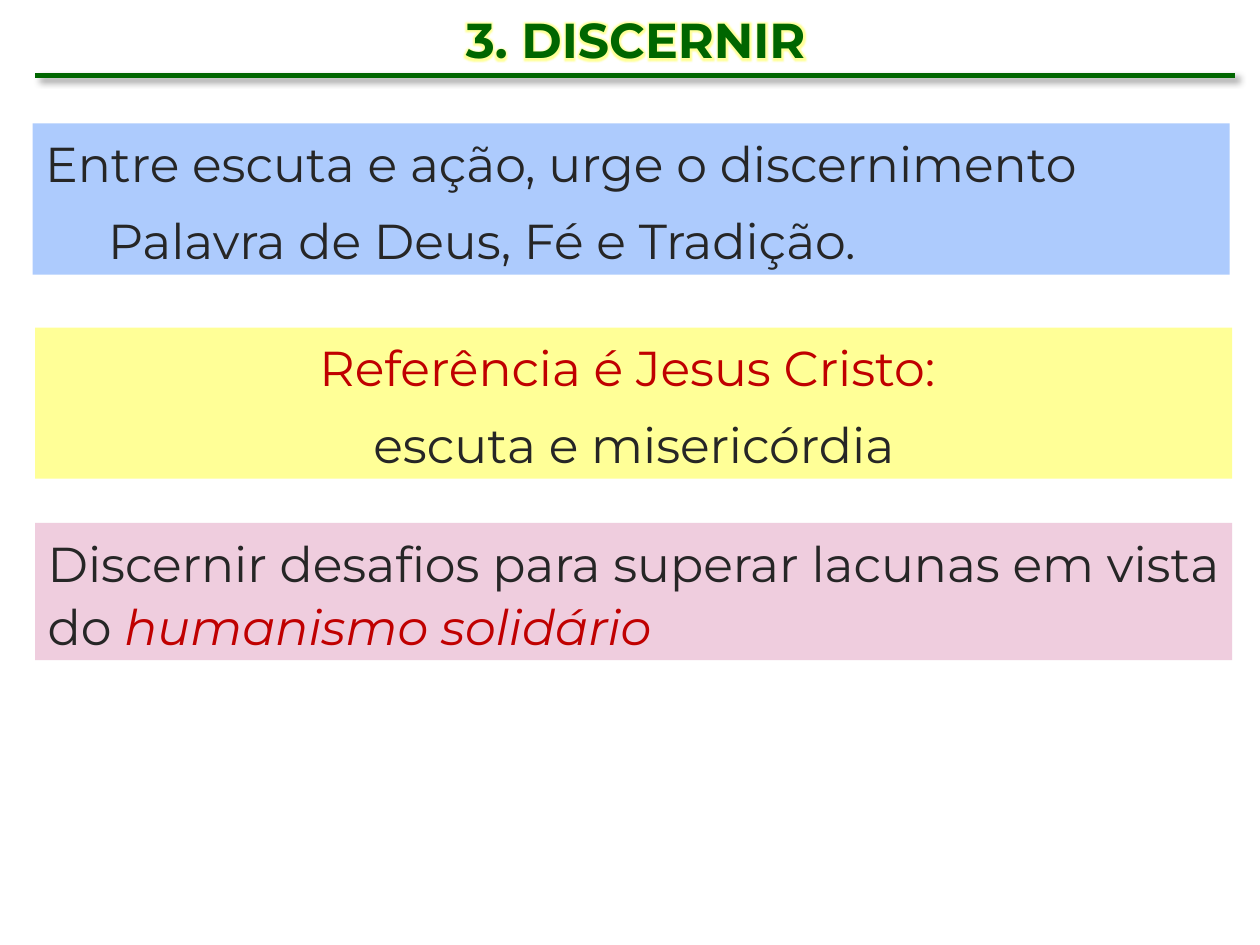
from lxml import etree
from pptx import Presentation
from pptx.dml.color import RGBColor
from pptx.enum.shapes import MSO_CONNECTOR, MSO_SHAPE
from pptx.enum.text import MSO_ANCHOR, MSO_AUTO_SIZE, PP_ALIGN
from pptx.oxml import parse_xml
from pptx.oxml.ns import nsdecls, qn
from pptx.util import Pt

LEFT, CENTER = PP_ALIGN.LEFT, PP_ALIGN.CENTER
RECT, STRAIGHT = MSO_SHAPE.RECTANGLE, MSO_CONNECTOR.STRAIGHT
TOP, MIDDLE = MSO_ANCHOR.TOP, MSO_ANCHOR.MIDDLE
FIT = MSO_AUTO_SIZE.SHAPE_TO_FIT_TEXT

GREEN = RGBColor(0x00, 0x66, 0x00)
DARK = RGBColor(0x26, 0x26, 0x26)
RED = RGBColor(0xC0, 0x00, 0x00)
BLUE = RGBColor(0xAD, 0xCB, 0xFD)
YELLOW = RGBColor(0xFF, 0xFF, 0x97)
PINK = RGBColor(0xEF, 0xCD, 0xDE)

FONT, SIZE = "Montserrat", 28
EDGE, PANEL_WIDTH = 20.16, 684

TITLE = "3. DISCERNIR"
PANELS = [
    (18.72, 70.56, 86.4, BLUE, LEFT, [
        [("Entre escuta e ação, urge o discernimento", DARK, False)],
        [("\tPalavra de Deus, Fé e Tradição.", DARK, False)],
    ]),
    (EDGE, 187.2, 86.4, YELLOW, CENTER, [
        [("Referência é Jesus Cristo: ", RED, False)],
        [("escuta e misericórdia", DARK, False)],
    ]),
    (EDGE, 298.8, 78.48, PINK, LEFT, [
        [("Discernir desafios para superar lacunas em vista do ", DARK, False),
         ("humanismo solidário", RED, True)],
    ]),
]

GLOW = (f'<a:effectLst {nsdecls("a")}><a:glow rad="{Pt(5)}">'
        f'<a:srgbClr val="{YELLOW}"/></a:glow></a:effectLst>')
SHADOW = (f'<a:effectLst {nsdecls("a")}><a:outerShdw blurRad="{Pt(4)}" '
          f'dist="{Pt(3)}" dir="2700000" algn="tl" rotWithShape="0">'
          '<a:srgbClr val="000000"><a:alpha val="40000"/></a:srgbClr>'
          '</a:outerShdw></a:effectLst>')


def add_text(p, text, color=DARK, bold=False, italic=False):
    r = p.add_run()
    r.text = text
    r.font.name = FONT
    r.font.size = Pt(SIZE)
    r.font.bold = bold
    r.font.italic = italic
    r.font.color.rgb = color
    return r


prs = Presentation()
prs.slide_width, prs.slide_height = Pt(720), Pt(540)
s = prs.slides.add_slide(prs.slide_layouts[6])

tf = s.shapes.add_textbox(Pt(EDGE), Pt(3.6), Pt(686.16), Pt(37.44)).text_frame
tf.word_wrap = True
tf.vertical_anchor = MIDDLE
p = tf.paragraphs[0]
p.alignment = CENTER
r = add_text(p, TITLE, color=GREEN, bold=True)
r.font.fill._xPr.find(qn("a:solidFill")).addnext(parse_xml(GLOW))

rule = s.shapes.add_connector(STRAIGHT, Pt(EDGE), Pt(43.2), Pt(705.6), Pt(43.2))
rule.line.color.rgb = GREEN
rule.line.width = Pt(3)
etree.ElementBase.append(rule._element.spPr, parse_xml(SHADOW))

for left, top, height, fill, align, paragraphs in PANELS:
    sp = s.shapes.add_shape(RECT, Pt(left), Pt(top), Pt(PANEL_WIDTH), Pt(height))
    sp.shadow.inherit = False
    sp.fill.solid()
    sp.fill.fore_color.rgb = fill
    sp.line.fill.background()
    tf = sp.text_frame
    tf.word_wrap = True
    tf.auto_size = FIT
    tf.vertical_anchor = TOP
    for i, runs in enumerate(paragraphs):
        p = tf.add_paragraph() if i else tf.paragraphs[0]
        p.alignment = align
        p.line_spacing = 1.07
        p.space_after = Pt(8)
        for text, color, italic in runs:
            add_text(p, text, color=color, italic=italic)

prs.save("out.pptx")
